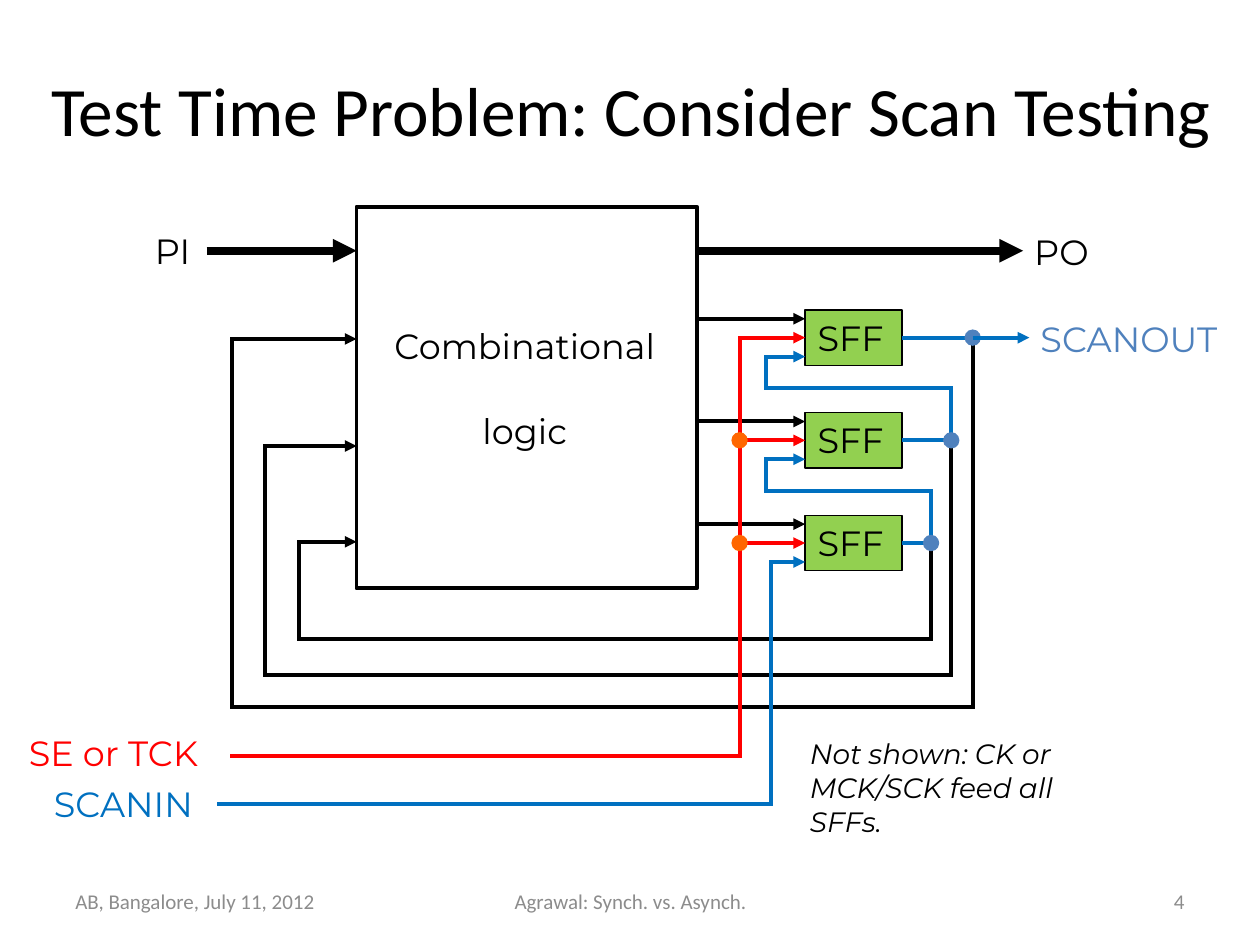
"""Build a slide showing a scan-test circuit with three scan flip-flops."""
from lxml import etree
from pptx import Presentation
from pptx.dml.color import RGBColor
from pptx.enum.shapes import MSO_CONNECTOR, MSO_SHAPE
from pptx.enum.text import MSO_ANCHOR, PP_ALIGN
from pptx.oxml.ns import qn
from pptx.util import Inches, Pt

STRAIGHT = MSO_CONNECTOR.STRAIGHT
RECTANGLE, OVAL = MSO_SHAPE.RECTANGLE, MSO_SHAPE.OVAL
TOP, MIDDLE = MSO_ANCHOR.TOP, MSO_ANCHOR.MIDDLE
LEFT, CENTER, RIGHT = PP_ALIGN.LEFT, PP_ALIGN.CENTER, PP_ALIGN.RIGHT
SIDE_LEFT, SIDE_RIGHT = 1, 3

COLORS = {
    "black": "000000", "red": "FF0000", "blue": "0070C0", "steel": "4F81BD",
    "orange": "FF6600", "green": "92D050", "gray": "8C8C8C",
}
TITLE = "Test Time Problem: Consider Scan Testing"
LABELS = [
    (["Combinational", "logic"], (2.97, 2.53, 2.39, 1.1), {"align": CENTER, "gap": 24.4}),
    (["PI"], (1.13, 1.77, 0.51, 0.43), {}),
    (["PO"], (8.11, 1.78, 0.63, 0.43), {}),
    (["SCANOUT"], (8.16, 2.47, 1.73, 0.43), {"color": "steel"}),
    (["SCANIN"], (0.33, 6.16, 1.4, 0.43), {"color": "blue"}),
    (["SE or TCK"], (0.13, 5.76, 1.75, 0.44), {"color": "red"}),
    (["Not shown: CK or", "MCK/SCK feed all", "SFFs."], (6.33, 5.8, 2.33, 0.9),
     {"size": 16, "italic": True}),
]
FOOTERS = [
    ("AB, Bangalore, July 11, 2012", 0.5, 2.33, LEFT),
    ("Agrawal: Synch. vs. Asynch.", 3.42, 3.17, CENTER),
    ("4", 7.17, 2.33, RIGHT),
]
STAGES = [
    {"tap": 7.72, "bottom": 5.61, "return": 1.84, "entry": 2.69},
    {"tap": 7.55, "bottom": 5.36, "return": 2.10, "entry": 3.54},
    {"tap": 7.39, "bottom": 5.07, "return": 2.37, "entry": 4.30},
]
BLOCK_LEFT, BLOCK_TOP, BLOCK_WIDTH, BLOCK_HEIGHT = 2.83, 1.64, 2.7, 3.03
BLOCK_RIGHT = BLOCK_LEFT + BLOCK_WIDTH
FLOP_LEFT, FLOP_WIDTH, FLOP_HEIGHT = 6.39, 0.77, 0.44
FIRST_CENTER, STAGE_PITCH, PIN_PITCH = 2.68, 0.815, 0.15
LINK_LEFT, LINK_DROP = 6.08, 0.4
ENABLE_X, SCAN_IN_X, PRIMARY_Y = 5.87, 6.12, 1.99
DOT = 0.13


def rgb(name):
    """Return the named colour."""
    return RGBColor.from_string(COLORS[name])


def write(shape, lines, size=20, color="black", font="Montserrat", italic=False,
          align=LEFT, anchor=TOP, wrap=False, gap=0):
    """Fill a shape with formatted paragraphs."""
    frame = shape.text_frame
    frame.word_wrap = wrap
    frame.vertical_anchor = anchor
    for index, line in enumerate(lines):
        paragraph = frame.add_paragraph() if index else frame.paragraphs[0]
        paragraph.alignment = align
        paragraph.space_before = Pt(gap if index else 0)
        run = paragraph.add_run()
        run.text = line
        run.font.size, run.font.name, run.font.italic = Pt(size), font, italic
        run.font.color.rgb = rgb(color)


def add_box(slide, kind, box, fill=None, line=None, width=0.75):
    """Add a preset shape without shadow."""
    shape = slide.shapes.add_shape(kind, *map(Inches, box))
    shape.shadow.inherit = False
    if fill:
        shape.fill.solid()
        shape.fill.fore_color.rgb = rgb(fill)
    else:
        shape.fill.background()
    if line:
        shape.line.color.rgb = rgb(line)
        shape.line.width = Pt(width)
    else:
        shape.line.fill.background()
    return shape


def add_wire(slide, points, color="black", width=2.25, arrow=False, source=None, target=None):
    """Route straight connectors through the points, optionally ending in an arrow."""
    for index, (start, end) in enumerate(zip(points, points[1:])):
        last = index == len(points) - 2
        wire = slide.shapes.add_connector(STRAIGHT, *map(Inches, (*start, *end)))
        wire.line.color.rgb = rgb(color)
        wire.line.width = Pt(width)
        properties = wire.line._get_or_add_ln()
        if last and arrow:
            etree.SubElement(properties, qn("a:tailEnd"), type="triangle")
        elif len(points) > 2:
            properties.set("cap", "sq")
        etree.SubElement(wire._element.spPr, qn("a:effectLst"))
        if source and index == 0:
            wire.begin_connect(source, SIDE_RIGHT)
        if target and last:
            wire.end_connect(target, SIDE_LEFT)


def add_dot(slide, x, y, color):
    """Mark a wire junction."""
    add_box(slide, OVAL, (x - DOT / 2, y - DOT / 2, DOT, DOT), fill=color)


def draw_circuit(slide):
    """Draw the logic block, flip-flops, wires and junctions."""
    add_box(slide, RECTANGLE, (BLOCK_LEFT, BLOCK_TOP, BLOCK_WIDTH, BLOCK_HEIGHT),
            line="black", width=2.25)
    add_wire(slide, [(1.64, PRIMARY_Y), (BLOCK_LEFT, PRIMARY_Y)], width=4.5, arrow=True)
    add_wire(slide, [(BLOCK_RIGHT, PRIMARY_Y), (8.12, PRIMARY_Y)], width=4.5, arrow=True)

    centers = [FIRST_CENTER + index * STAGE_PITCH for index in range(len(STAGES))]
    flops = []
    for stage, center in zip(STAGES, centers):
        flop = add_box(slide, RECTANGLE,
                       (FLOP_LEFT, center - FLOP_HEIGHT / 2, FLOP_WIDTH, FLOP_HEIGHT),
                       fill="green", line="black")
        write(flop, ["SFF"])
        flops.append(flop)
        data_y = center - PIN_PITCH
        add_wire(slide, [(BLOCK_RIGHT, data_y), (FLOP_LEFT, data_y)], arrow=True)
        add_wire(slide, [(stage["tap"], center), (stage["tap"], stage["bottom"]),
                         (stage["return"], stage["bottom"]),
                         (stage["return"], stage["entry"]),
                         (BLOCK_LEFT, stage["entry"])], arrow=True)

    add_wire(slide, [(1.84, 6), (ENABLE_X, 6), (ENABLE_X, FIRST_CENTER)], "red")
    scan_y = centers[-1] + PIN_PITCH
    add_wire(slide, [(1.74, 6.38), (SCAN_IN_X, 6.38), (SCAN_IN_X, scan_y),
                     (FLOP_LEFT, scan_y)], "blue", arrow=True)
    for stage, center, flop in zip(STAGES, centers, flops):
        add_wire(slide, [(ENABLE_X, center), (FLOP_LEFT, center)], "red",
                 arrow=True, target=flop)
        add_wire(slide, [(FLOP_LEFT + FLOP_WIDTH, center), (stage["tap"], center)],
                 "blue", source=flop)
    for stage, center, above in zip(STAGES[1:], centers[1:], centers):
        link_y, pin_y = above + LINK_DROP, above + PIN_PITCH
        add_wire(slide, [(stage["tap"], center), (stage["tap"], link_y), (LINK_LEFT, link_y),
                         (LINK_LEFT, pin_y), (FLOP_LEFT, pin_y)], "blue", arrow=True)
        add_dot(slide, ENABLE_X, center, "orange")
    for stage, center in zip(STAGES, centers):
        add_dot(slide, stage["tap"], center, "steel")
    add_wire(slide, [(STAGES[0]["tap"], FIRST_CENTER), (8.17, FIRST_CENTER)], "blue", arrow=True)


def main():
    """Assemble and save the slide."""
    presentation = Presentation()
    presentation.slide_width, presentation.slide_height = Inches(10), Inches(7.5)
    slide = presentation.slides.add_slide(presentation.slide_layouts[5])
    title = slide.shapes.title
    title.left, title.top, title.width, title.height = map(Inches, (0.13, 0.24, 9.76, 1.25))
    write(title, [TITLE], size=39.6, font="Calibri", align=CENTER, anchor=MIDDLE, wrap=True)
    draw_circuit(slide)
    for lines, box, style in LABELS:
        write(slide.shapes.add_textbox(*map(Inches, box)), lines, **style)
    for text, left, width, align in FOOTERS:
        footer = slide.shapes.add_textbox(*map(Inches, (left, 6.95, width, 0.4)))
        write(footer, [text], size=12, color="gray", font="Calibri", align=align,
              anchor=MIDDLE, wrap=True)
    presentation.save("out.pptx")


if __name__ == "__main__":
    main()
